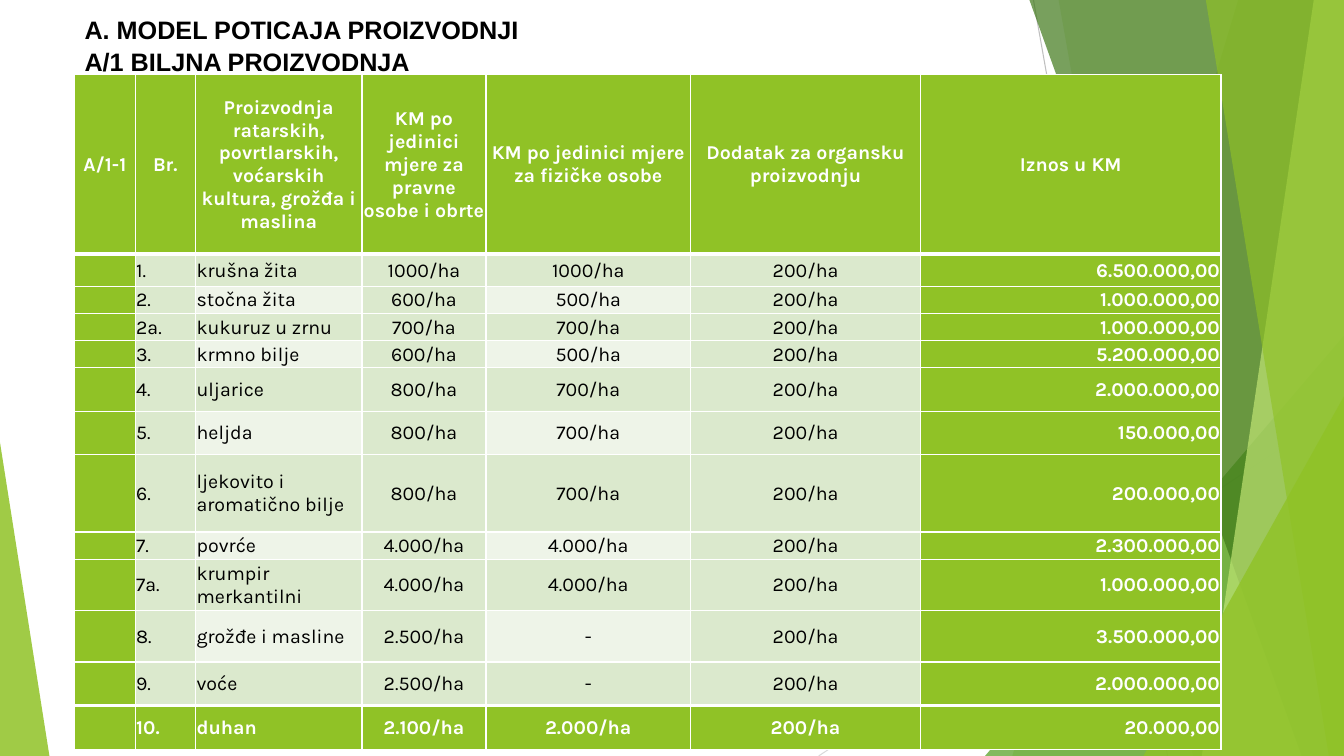
import dataclasses

import lxml.etree
import pptx
import pptx.dml.color
import pptx.enum.shapes
import pptx.enum.text
import pptx.oxml.ns
import pptx.util

Inches = pptx.util.Inches
Pt = pptx.util.Pt
qn = pptx.oxml.ns.qn
ALIGN = pptx.enum.text.PP_ALIGN


@dataclasses.dataclass(frozen=True)
class Theme:
    green: str = "90C226"
    leaf: str = "54A021"
    forest: str = "3F7819"
    lime: str = "C0E474"
    band: str = "DBE9CD"
    pale: str = "EEF4E8"
    white: str = "FFFFFF"
    black: str = "000000"
    title_font: str = "Arial"
    table_font: str = "Karla"
    title_size: int = 18
    table_size: int = 14
    thin: int = 1
    thick: int = 3


THEME = Theme()
WIDTH, HEIGHT = 13.33, 7.5

TITLE = ["A. MODEL POTICAJA PROIZVODNJI", "A/1 BILJNA PROIZVODNJA"]
COLUMNS = [0.6, 0.6, 1.65, 1.23, 2.03, 2.28, 2.98]
ALIGNMENTS = [ALIGN.CENTER, ALIGN.LEFT, ALIGN.LEFT, ALIGN.CENTER, ALIGN.CENTER,
              ALIGN.CENTER, ALIGN.RIGHT]
HEADER_HEIGHT = 1.78
HEADER = ["A/1-1", "Br.",
          "Proizvodnja ratarskih, povrtlarskih, voćarskih kultura, grožđa i maslina",
          "KM po jedinici mjere za pravne osobe i obrte",
          "KM po jedinici mjere za fizičke osobe",
          "Dodatak za organsku proizvodnju", "Iznos u KM"]
ORGANIC = "200/ha"
# Row height, number, crop, rate for firms, rate for persons, total
CROPS = [
    (0.32, "1.", "krušna žita", "1000/ha", "1000/ha", "6.500.000,00"),
    (0.27, "2.", "stočna žita", "600/ha", "500/ha", "1.000.000,00"),
    (0.27, "2a.", "kukuruz u zrnu", "700/ha", "700/ha", "1.000.000,00"),
    (0.27, "3.", "krmno bilje", "600/ha", "500/ha", "5.200.000,00"),
    (0.43, "4.", "uljarice", "800/ha", "700/ha", "2.000.000,00"),
    (0.43, "5.", "heljda", "800/ha", "700/ha", "150.000,00"),
    (0.77, "6.", "ljekovito i aromatično bilje", "800/ha", "700/ha", "200.000,00"),
    (0.27, "7.", "povrće", "4.000/ha", "4.000/ha", "2.300.000,00"),
    (0.51, "7a.", "krumpir merkantilni", "4.000/ha", "4.000/ha", "1.000.000,00"),
    (0.51, "8.", "grožđe i masline", "2.500/ha", "-", "3.500.000,00"),
    (0.43, "9.", "voće", "2.500/ha", "-", "2.000.000,00"),
    (0.44, "10.", "duhan", "2.100/ha", "2.000/ha", "20.000,00"),
]


def rgb(color):
    return pptx.dml.color.RGBColor.from_string(color)


def paint(shape, color, opacity):
    shape.shadow.inherit = False
    shape.line.fill.background()
    shape.fill.solid()
    shape.fill.fore_color.rgb = rgb(color)
    tint = shape.fill._xPr.find(qn("a:solidFill"))[0]
    lxml.etree.SubElement(tint, qn("a:alpha"), val=str(opacity * 1000))


def add_span(para, text, font, size, color, bold):
    span = para.add_run()
    span.text = text
    span.font.name = font
    span.font.size = Pt(size)
    span.font.bold = bold
    span.font.color.rgb = rgb(color)


def add_ray(page, start, end, color):
    ray = page.shapes.add_connector(pptx.enum.shapes.MSO_CONNECTOR.STRAIGHT,
                                    *map(Inches, start + end))
    ray.line.color.rgb = rgb(color)
    ray.line.width = Pt(0.75)
    lxml.etree.SubElement(ray._element.spPr, qn("a:effectLst"))


def add_blade(page, top_x, bottom_x, color, opacity):
    """A full-height facet reaching from its slanted left edge to the page's right edge."""
    outline = page.shapes.build_freeform(Inches(top_x), 0)
    corners = [(WIDTH, 0), (WIDTH, HEIGHT), (bottom_x, HEIGHT)]
    outline.add_line_segments([(Inches(x), Inches(y)) for x, y in corners])
    paint(outline.convert_to_shape(), color, opacity)


def add_corner(page, left, top, width, apex, color, opacity):
    """A triangle standing on the bottom edge of the page."""
    corner = page.shapes.add_shape(
        pptx.enum.shapes.MSO_SHAPE.ISOSCELES_TRIANGLE,
        *map(Inches, (left, top, width, HEIGHT - top)))
    corner.adjustments[0] = apex
    paint(corner, color, opacity)


def add_backdrop(page):
    add_ray(page, (10.25, 0), (11.58, HEIGHT), "BFBFBF")
    add_ray(page, (WIDTH, 4.03), (8.12, HEIGHT), "D9D9D9")
    add_blade(page, 12.28, 10.04, THEME.green, 30)
    add_blade(page, 10.5, 11.83, THEME.green, 20)
    add_corner(page, 9.77, 3.33, 3.56, 1, THEME.leaf, 72)
    add_blade(page, 10.21, 12.91, THEME.forest, 70)
    add_blade(page, 13.03, 11.92, THEME.lime, 70)
    add_blade(page, 11.96, 13.18, THEME.green, 65)
    add_corner(page, 11.34, 3.93, 1.99, 1, THEME.green, 80)
    add_corner(page, 0, 4.39, 0.49, 0, THEME.green, 85)


def add_title(page, left, top, width, height):
    box = page.shapes.add_textbox(*map(Inches, (left, top, width, height)))
    box.text_frame.word_wrap = True
    para = box.text_frame.paragraphs[0]
    para.line_spacing = 1.07
    for number, line in enumerate(TITLE):
        if number:
            para.add_line_break()
        add_span(para, line, THEME.title_font, THEME.title_size, THEME.black, True)


def set_borders(cell, top, bottom):
    props = cell._tc.get_or_add_tcPr()
    widths = {"a:lnL": THEME.thin, "a:lnR": THEME.thin, "a:lnT": top, "a:lnB": bottom}
    for place, (tag, width) in enumerate(widths.items()):
        edge = lxml.etree.Element(qn(tag), w=str(Pt(width)))
        fill = lxml.etree.SubElement(edge, qn("a:solidFill"))
        lxml.etree.SubElement(fill, qn("a:srgbClr"), val=THEME.white)
        props.insert(place, edge)


def fill_cell(cell, text, align, fill, strong):
    cell.margin_left = cell.margin_top = cell.margin_right = Inches(0.01)
    cell.margin_bottom = 0
    cell.vertical_anchor = pptx.enum.text.MSO_ANCHOR.MIDDLE
    cell.fill.solid()
    cell.fill.fore_color.rgb = rgb(fill)
    para = cell.text_frame.paragraphs[0]
    para.alignment = align
    if text:
        add_span(para, text, THEME.table_font, THEME.table_size,
                 THEME.white if strong else THEME.black, strong)
    else:  # keeps an empty cell from stretching a low row
        lxml.etree.SubElement(para._p, qn("a:endParaRPr"), sz=str(THEME.table_size * 100))


def add_crop_table(page, left, top):
    rows = [HEADER] + [["", number, crop, firms, persons, ORGANIC, total]
                       for _, number, crop, firms, persons, total in CROPS]
    heights = [HEADER_HEIGHT] + [crop[0] for crop in CROPS]
    table = page.shapes.add_table(
        len(rows), len(COLUMNS),
        *map(Inches, (left, top, sum(COLUMNS), sum(heights)))).table
    for column, width in zip(table.columns, COLUMNS):
        column.width = Inches(width)
    last_row, last_column = len(rows) - 1, len(COLUMNS) - 1
    for r, values in enumerate(rows):
        table.rows[r].height = Inches(heights[r])
        for c, text in enumerate(values):
            strong = r in (0, last_row) or c in (0, last_column)
            # Every second row is pale in the crop and personal rate columns
            pale = r % 2 == 0 and c in (2, 4)
            fill = THEME.green if strong else THEME.pale if pale else THEME.band
            align = ALIGN.CENTER if r == 0 else ALIGNMENTS[c]
            cell = table.cell(r, c)
            fill_cell(cell, text, align, fill, strong)
            set_borders(cell, THEME.thick if r in (1, last_row) else THEME.thin,
                        THEME.thick if r in (0, last_row - 1) else THEME.thin)


def main():
    deck = pptx.Presentation()
    deck.slide_width, deck.slide_height = Inches(WIDTH), Inches(HEIGHT)
    page = deck.slides.add_slide(deck.slide_layouts[6])
    add_backdrop(page)
    add_title(page, 0.74, 0.07, 9.89, 0.96)
    add_crop_table(page, 0.74, 0.74)
    deck.save("out.pptx")


if __name__ == "__main__":
    main()
